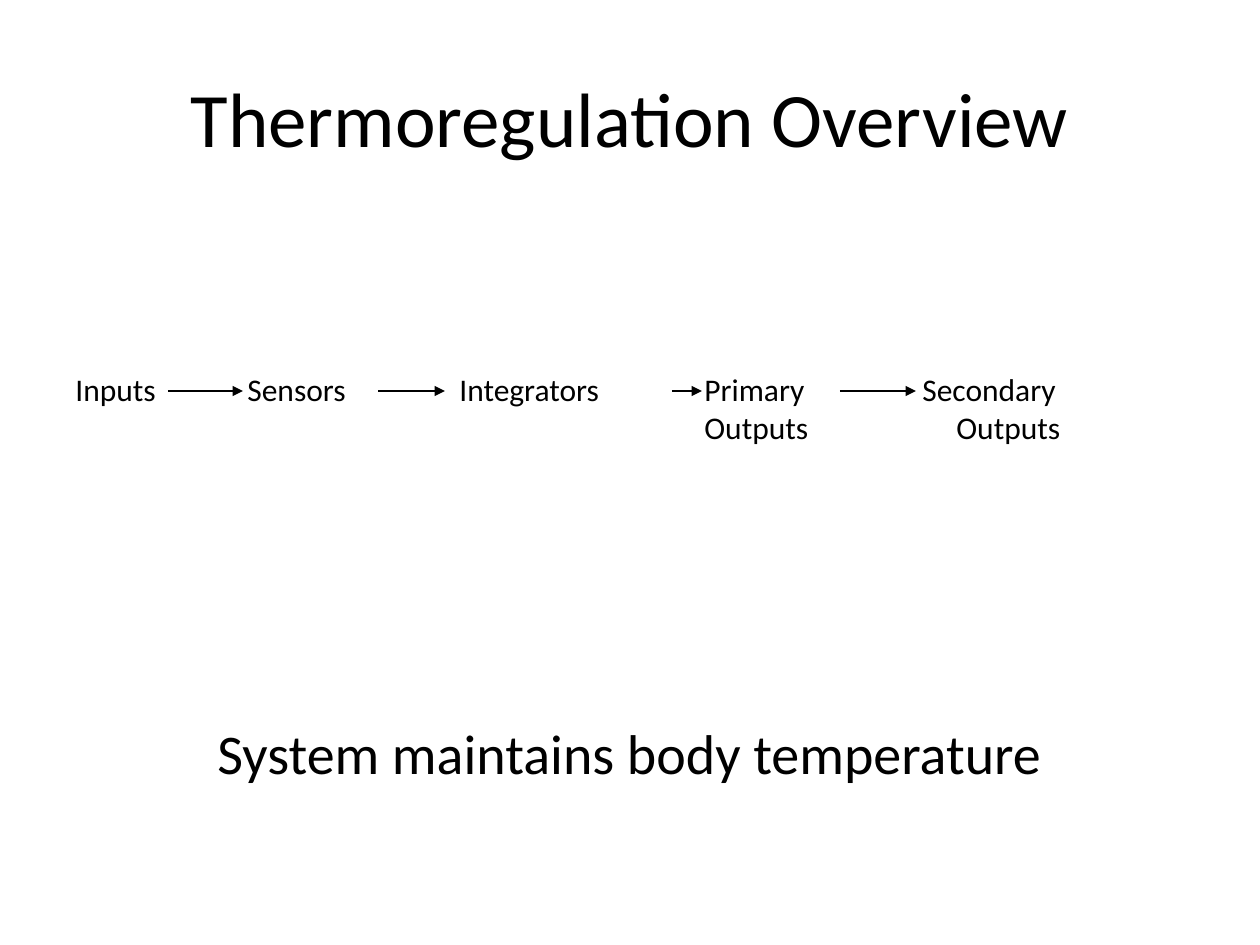
import dataclasses

import lxml.etree
import pptx
import pptx.dml.color
import pptx.enum.shapes
import pptx.enum.text
import pptx.oxml.ns
import pptx.util

qn = pptx.oxml.ns.qn
Align = pptx.enum.text.PP_ALIGN
Anchor = pptx.enum.text.MSO_ANCHOR


@dataclasses.dataclass(frozen=True)
class Theme:
    font: str = "Calibri"
    ink: pptx.dml.color.RGBColor = pptx.dml.color.RGBColor(0, 0, 0)
    title: int = 44
    stage: int = 18
    summary: int = 32
    line: float = 0.75


theme = Theme()


def px(count):
    """Turn slide pixels (126 to the inch) into EMU."""
    return pptx.util.Emu(round(count * 914400 / 126))


def add_text(page, area, lines, size, align=Align.LEFT, anchor=Anchor.TOP, wrap=True):
    """Add a text box; each line is its text and its tab stops in px."""
    box = page.shapes.add_textbox(*map(px, area))
    frame = box.text_frame
    frame.word_wrap = wrap
    frame.vertical_anchor = anchor
    for index, (text, stops) in enumerate(lines):
        para = frame.add_paragraph() if index else frame.paragraphs[0]
        para.alignment = align
        if stops:
            tabs = lxml.etree.SubElement(para._p.get_or_add_pPr(), qn("a:tabLst"))
            for stop in stops:
                lxml.etree.SubElement(tabs, qn("a:tab"), pos=str(px(stop)), algn="l")
        span = para.add_run()
        span.text = text
        span.font.name = theme.font
        span.font.size = pptx.util.Pt(size)
        span.font.color.rgb = theme.ink


deck = pptx.Presentation()
deck.slide_width, deck.slide_height = px(1260), px(945)
page = deck.slides.add_slide(deck.slide_layouts[6])

add_text(page, (63, 38, 1134, 158), [("Thermoregulation Overview", ())],
         theme.title, Align.CENTER, Anchor.MIDDLE)

stages = ["Inputs", "Sensors", "Integrators", "Primary", "Secondary"]
add_text(page, (63, 364, 1063, 89), [
    ("\t".join(stages), (172, 384, 629, 847)),
    ("\tOutputs\tOutputs", (629, 881)),
], theme.stage)

arrow_y = 391
for start, end in [(168, 243), (378, 445), (672, 702), (840, 916)]:
    arrow = page.shapes.add_connector(
        pptx.enum.shapes.MSO_CONNECTOR.STRAIGHT,
        px(start), px(arrow_y), px(end), px(arrow_y))
    arrow.line.color.rgb = theme.ink
    arrow.line.width = pptx.util.Pt(theme.line)
    lxml.etree.SubElement(arrow.line._get_or_add_ln(), qn("a:tailEnd"), type="triangle")
    lxml.etree.SubElement(arrow._element.spPr, qn("a:effectLst"))

add_text(page, (205, 712, 920, 79), [("System maintains body temperature", ())],
         theme.summary, wrap=False)

deck.save("out.pptx")
